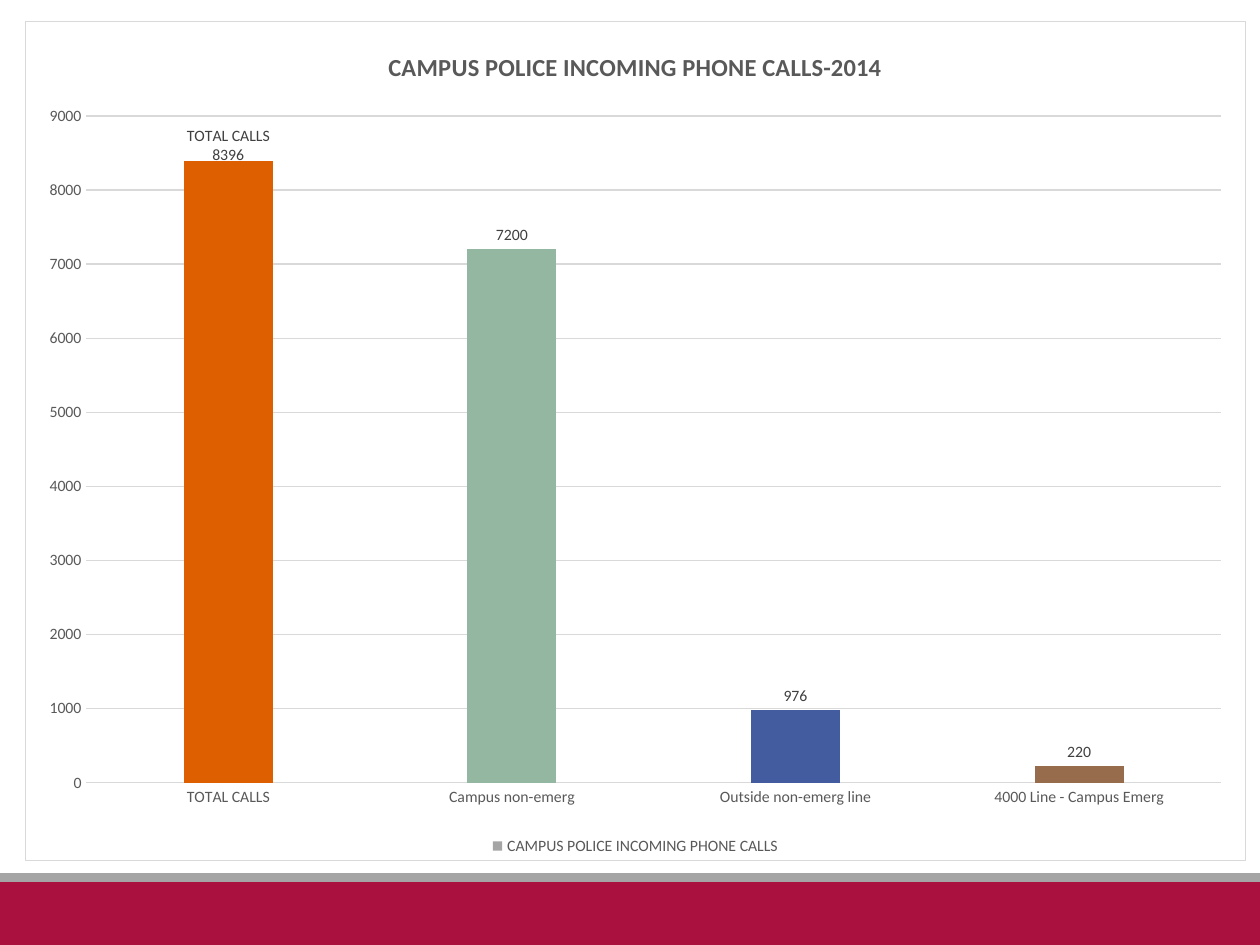
from dataclasses import dataclass

from lxml import etree
from pptx import Presentation
from pptx.chart.data import CategoryChartData
from pptx.dml.color import RGBColor
from pptx.enum.chart import (XL_CHART_TYPE, XL_LABEL_POSITION,
                             XL_LEGEND_POSITION, XL_TICK_MARK)
from pptx.enum.shapes import MSO_SHAPE
from pptx.oxml import parse_xml
from pptx.oxml.ns import qn
from pptx.util import Pt

COLUMN = XL_CHART_TYPE.COLUMN_CLUSTERED
RECT = MSO_SHAPE.RECTANGLE
BOTTOM = XL_LEGEND_POSITION.BOTTOM
OUTER = XL_LABEL_POSITION.OUTSIDE_END
NO_TICK = XL_TICK_MARK.NONE


@dataclass(frozen=True)
class Theme:
    font: str = "Calibri"
    base: float = 10
    small: float = 9
    head: float = 14
    rule: float = 0.75
    white: str = "FFFFFF"
    red: str = "AA113F"
    gray: str = "A5A5A5"
    grid: str = "D9D9D9"
    soft: str = "595959"
    dark: str = "404040"
    black: str = "000000"


@dataclass(frozen=True)
class Band:
    top: float
    height: float
    color: str


@dataclass(frozen=True)
class Bar:
    name: str
    calls: int
    color: str


THEME = Theme()
WIDTH, HEIGHT = 720, 540
BANDS = [Band(504, 36, THEME.red), Band(499, 5, THEME.gray)]
BARS = [
    Bar("TOTAL CALLS", 8396, "DE5F00"),
    Bar("Campus non-emerg", 7200, "93B7A1"),
    Bar("Outside non-emerg line", 976, "435B9F"),
    Bar("4000 Line - Campus Emerg", 220, "966C4C"),
]


def paint(fill, color: str) -> None:
    fill.solid()
    fill.fore_color.rgb = RGBColor.from_string(color)


def style(font, size: float, color: str, bold: bool = False) -> None:
    font.name = THEME.font
    font.size = Pt(size)
    font.bold = bold
    font.color.rgb = RGBColor.from_string(color)


def write(frame, text: str, *, size: float, color: str,
          bold: bool = False) -> None:
    """Fill a text frame, one paragraph for each line."""
    frame.text = text
    for para in frame.paragraphs:
        for run in para.runs:
            style(run.font, size, color, bold)


def rule(line) -> None:
    line.width = Pt(THEME.rule)
    paint(line.fill, THEME.grid)


def draw_band(slide, band: Band) -> None:
    shape = slide.shapes.add_shape(RECT, 0, Pt(band.top), Pt(WIDTH),
                                   Pt(band.height))
    shape.shadow.inherit = False
    shape.line.fill.background()
    paint(shape.fill, band.color)


def frame_chart(chart) -> None:
    """Give the chart area its white fill and thin border."""
    area = parse_xml(
        '<c:spPr xmlns:c="http://schemas.openxmlformats.org/drawingml/2006/chart"'
        ' xmlns:a="http://schemas.openxmlformats.org/drawingml/2006/main">'
        f'<a:solidFill><a:srgbClr val="{THEME.white}"/></a:solidFill>'
        f'<a:ln w="{Pt(THEME.rule)}"><a:solidFill>'
        f'<a:srgbClr val="{THEME.grid}"/></a:solidFill></a:ln></c:spPr>')
    chart.element.find(qn("c:chart")).addnext(area)


def shift_label(chart, x: float, y: float) -> None:
    """Move the first custom label by a share of the chart size."""
    label = chart.element.find(".//" + qn("c:dLbl"))
    layout = etree.Element(qn("c:layout"))
    manual = etree.SubElement(layout, qn("c:manualLayout"))
    for tag, val in (("c:x", x), ("c:y", y)):
        etree.SubElement(manual, qn(tag)).set("val", str(val))
    label.find(qn("c:idx")).addnext(layout)


def draw_chart(slide, bars: list[Bar]) -> None:
    data = CategoryChartData()
    data.categories = [bar.name for bar in bars]
    data.add_series("CAMPUS POLICE INCOMING PHONE CALLS",
                    [bar.calls for bar in bars])
    chart = slide.shapes.add_chart(COLUMN, Pt(14), Pt(12), Pt(698), Pt(480),
                                   data).chart
    style(chart.font, THEME.base, THEME.black)
    frame_chart(chart)

    # Title and legend
    chart.has_title = True
    write(chart.chart_title.text_frame,
          "CAMPUS POLICE INCOMING PHONE CALLS-2014",
          size=THEME.head, color=THEME.soft, bold=True)
    chart.chart_title.include_in_layout = False
    chart.has_legend = True
    chart.legend.position = BOTTOM
    chart.legend.include_in_layout = False
    style(chart.legend.font, THEME.small, THEME.soft)

    # Axes
    for axis in (chart.category_axis, chart.value_axis):
        axis.major_tick_mark = axis.minor_tick_mark = NO_TICK
        style(axis.tick_labels.font, THEME.small, THEME.soft)
    rule(chart.category_axis.format.line)
    values = chart.value_axis
    values.minimum_scale, values.maximum_scale = 0, 9000
    values.major_unit = 1000
    values.format.line.fill.background()
    rule(values.major_gridlines.format.line)

    # Bars
    plot = chart.plots[0]
    plot.gap_width, plot.overlap = 219, -27
    plot.vary_by_categories = False
    series = plot.series[0]
    paint(series.format.fill, THEME.gray)
    for i, bar in enumerate(bars):
        paint(series.points[i].format.fill, bar.color)

    # Labels
    labels = series.data_labels
    labels.show_value = True
    labels.position = OUTER
    style(labels.font, THEME.small, THEME.dark)
    total = series.points[0].data_label
    write(total.text_frame, f"{bars[0].name}\n{bars[0].calls}",
          size=THEME.small, color=THEME.dark)
    total.position = OUTER
    shift_label(chart, 0, 0.01)


def main() -> None:
    deck = Presentation()
    deck.slide_width, deck.slide_height = Pt(WIDTH), Pt(HEIGHT)
    slide = deck.slides.add_slide(deck.slide_layouts[6])
    paint(slide.background.fill, THEME.white)
    for band in BANDS:
        draw_band(slide, band)
    draw_chart(slide, BARS)
    deck.save("out.pptx")


if __name__ == "__main__":
    main()
